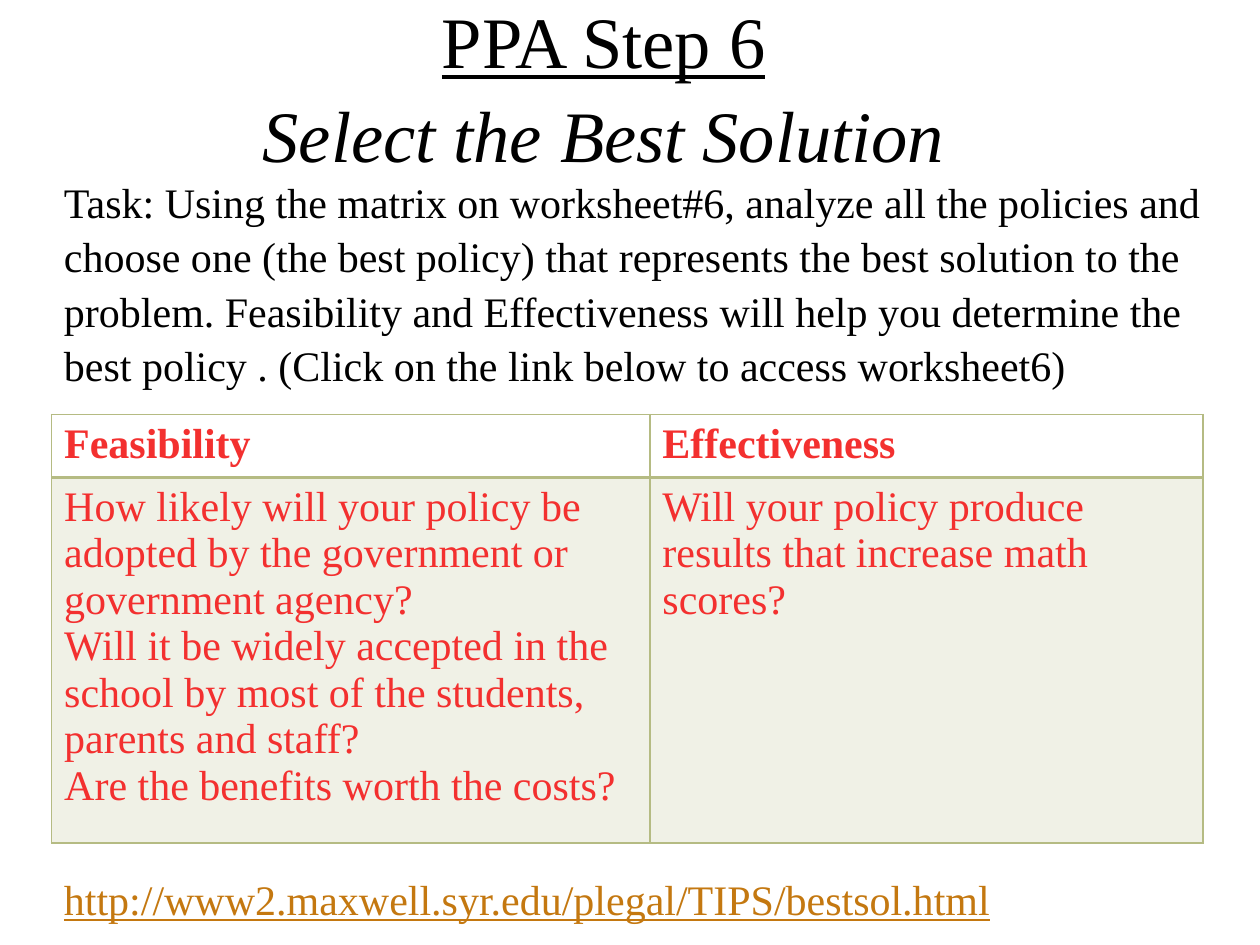
"""Build the PPA Step 6 slide with its task, criteria table and worksheet address."""
from dataclasses import dataclass

from lxml import etree
from pptx import Presentation
from pptx.dml.color import RGBColor
from pptx.enum.text import MSO_ANCHOR, MSO_AUTO_SIZE, PP_ALIGN
from pptx.oxml.ns import qn
from pptx.util import Cm, Pt

CENTER = PP_ALIGN.CENTER
MIDDLE = MSO_ANCHOR.MIDDLE
NO_FIT = MSO_AUTO_SIZE.NONE
GROW = MSO_AUTO_SIZE.SHAPE_TO_FIT_TEXT
FONT = "Times New Roman"
TEXT_SIZE = 24
TITLE_SIZE = 41.4
LINE_SPACING = 1.08
COLORS = {"text": "000000", "criteria": "F3302F", "link": "C47810", "grid": "B5BB83"}


@dataclass
class Area:
    left: float
    top: float
    width: float
    height: float

    def lengths(self) -> tuple:
        return Cm(self.left), Cm(self.top), Cm(self.width), Cm(self.height)


@dataclass
class Criterion:
    name: str
    questions: list[str]


TITLE_AREA = Area(2.01, 0, 20.32, 3.35)
TASK_AREA = Area(1.04, 3.35, 23.95, 5.92)
TABLE_AREA = Area(1.04, 8.36, 23.21, 8.2)
LINK_AREA = Area(1.04, 17.48, 19.43, 1.27)
COLUMN_WIDTHS = [12.06, 11.15]
ROW_HEIGHTS = [1.22, 6.98]
TASK = (
    "Task: Using the matrix on worksheet#6, analyze all the policies and choose one "
    "(the best policy) that represents the best solution to the problem. Feasibility and "
    "Effectiveness will help you determine the best policy . "
    "(Click on the link below to access worksheet6)"
)
LINK = "http://www2.maxwell.syr.edu/plegal/TIPS/bestsol.html"
CRITERIA = [
    Criterion("Feasibility", [
        "How likely will your policy be adopted by the government or government agency?",
        "Will it be widely accepted in the school by most of the students, parents and staff?",
        "Are the benefits worth the costs?",
    ]),
    Criterion("Effectiveness", [
        "Will your policy produce results that increase math scores?",
    ]),
]


def format_text(frame, color: str, size: float = TEXT_SIZE, bold: bool = False) -> None:
    for para in frame.paragraphs:
        for span in para.runs:
            span.font.name = FONT
            span.font.size = Pt(size)
            span.font.bold = bold
            span.font.color.rgb = RGBColor.from_string(COLORS[color])


def add_title(page) -> None:
    title = page.shapes.title
    title.left, title.top, title.width, title.height = TITLE_AREA.lengths()
    frame = title.text_frame
    frame.auto_size = NO_FIT
    frame.vertical_anchor = MIDDLE
    para = frame.paragraphs[0]
    para.text = "PPA Step 6\vSelect the Best Solution"
    para.alignment = CENTER
    para.line_spacing = LINE_SPACING
    format_text(frame, "text", TITLE_SIZE)
    step, subject = para.runs
    step.font.underline = True
    subject.font.italic = True


def add_text(page, area: Area, text: str, color: str, wrap: bool = True):
    frame = page.shapes.add_textbox(*area.lengths()).text_frame
    frame.word_wrap = wrap
    frame.text = text
    format_text(frame, color)
    return frame


def set_borders(cell, top: float, bottom: float) -> None:
    properties = cell._tc.get_or_add_tcPr()
    widths = {"a:lnL": 1, "a:lnR": 1, "a:lnT": top, "a:lnB": bottom}
    for position, (side, width) in enumerate(widths.items()):
        line = etree.Element(qn(side), w=str(Pt(width)))
        fill = etree.SubElement(line, qn("a:solidFill"))
        etree.SubElement(fill, qn("a:srgbClr"), val=COLORS["grid"])
        properties.insert(position, line)


def tint(cell) -> None:
    cell.fill.solid()
    cell.fill.fore_color.rgb = RGBColor.from_string(COLORS["grid"])
    color = cell._tc.tcPr.find(".//" + qn("a:srgbClr"))
    etree.SubElement(color, qn("a:alpha"), val="20000")


def add_criteria(page) -> None:
    table = page.shapes.add_table(
        len(ROW_HEIGHTS), len(CRITERIA), *TABLE_AREA.lengths()).table
    for row, height in zip(table.rows, ROW_HEIGHTS):
        row.height = Cm(height)
    for index, criterion in enumerate(CRITERIA):
        table.columns[index].width = Cm(COLUMN_WIDTHS[index])
        header, body = table.cell(0, index), table.cell(1, index)
        header.text_frame.text = criterion.name
        format_text(header.text_frame, "criteria", bold=True)
        header.fill.background()
        set_borders(header, top=1, bottom=2)
        body.text_frame.text = "\n".join(criterion.questions)
        format_text(body.text_frame, "criteria")
        tint(body)
        set_borders(body, top=2, bottom=1)


def main() -> None:
    deck = Presentation()
    deck.slide_width, deck.slide_height = Cm(25.4), Cm(19.05)
    page = deck.slides.add_slide(deck.slide_layouts.get_by_name("Title Only"))
    task = add_text(page, TASK_AREA, TASK, "text")
    task.paragraphs[0].line_spacing = LINE_SPACING
    add_title(page)
    add_criteria(page)
    link = add_text(page, LINK_AREA, LINK, "link", wrap=False)
    link.auto_size = GROW
    link.paragraphs[0].runs[0].font.underline = True
    deck.save("out.pptx")


if __name__ == "__main__":
    main()
